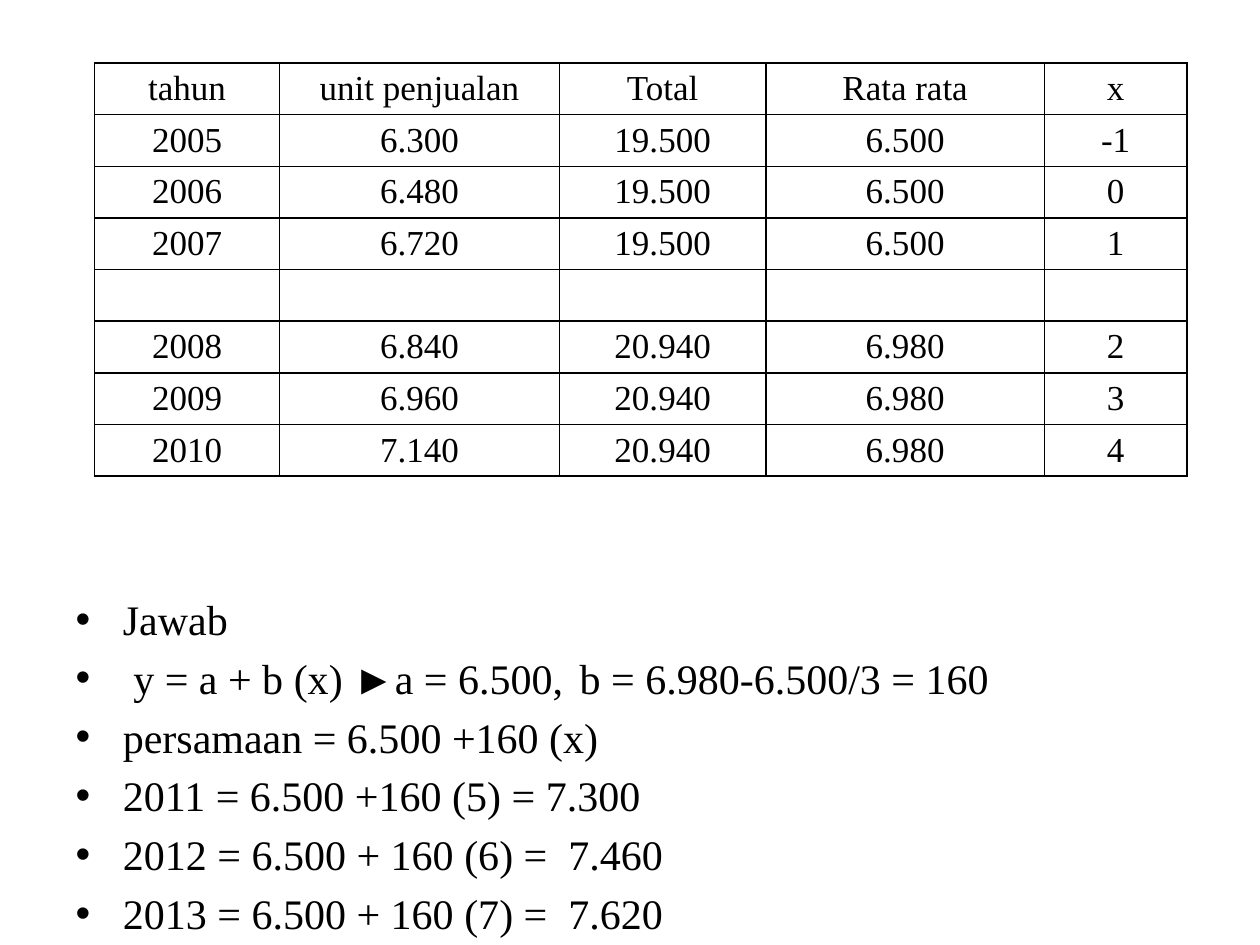
from lxml.etree import SubElement
from pptx import Presentation
from pptx.dml.color import RGBColor
from pptx.enum.text import MSO_ANCHOR, MSO_AUTO_SIZE, PP_ALIGN
from pptx.oxml.ns import qn
from pptx.util import Inches, Pt

BLACK = "000000"


def set_font(paragraph, size, color=BLACK):
    paragraph.font.name = "Times New Roman"
    paragraph.font.size = Pt(size)
    paragraph.font.bold = False
    paragraph.font.color.rgb = RGBColor.from_string(color)


def add_borders(cell, color=BLACK, width=1):
    properties = cell._tc.get_or_add_tcPr()
    for side in ("a:lnL", "a:lnR", "a:lnT", "a:lnB"):
        line = SubElement(properties, qn(side), w=str(Pt(width)))
        fill = SubElement(line, qn("a:solidFill"))
        SubElement(fill, qn("a:srgbClr"), val=color)


presentation = Presentation()
presentation.slide_width = Inches(10)
presentation.slide_height = Inches(7.5)

# The slide has a body but no title
slide = presentation.slides.add_slide(presentation.slide_layouts[1])
title = slide.shapes.title
title.element.getparent().remove(title.element)

# Worked answer, starting below the table; bullets come from the layout
answer = [
    "Jawab",
    " y = a + b (x) ►a = 6.500, \tb = 6.980-6.500/3 = 160",
    "persamaan = 6.500 +160 (x)",
    "2011 = 6.500 +160 (5) = 7.300",
    "2012 = 6.500 + 160 (6) =  7.460",
    "2013 = 6.500 + 160 (7) =  7.620",
]
body = slide.placeholders[1]
body.left, body.top = Inches(0.5), Inches(0.33)
body.width, body.height = Inches(9), Inches(7.17)
text_frame = body.text_frame
text_frame.auto_size = MSO_AUTO_SIZE.NONE
text_frame.vertical_anchor = MSO_ANCHOR.TOP
text_frame.margin_top = Inches(4.38)
text_frame.text = "\n".join(answer)
for paragraph in text_frame.paragraphs:
    set_font(paragraph, 24)
text_frame.paragraphs[0].space_before = Pt(0)

# Sales table
rows = [
    ("tahun", "unit penjualan", "Total", "Rata rata", "x"),
    ("2005", "6.300", "19.500", "6.500", "-1"),
    ("2006", "6.480", "19.500", "6.500", "0"),
    ("2007", "6.720", "19.500", "6.500", "1"),
    ("", "", "", "", ""),
    ("2008", "6.840", "20.940", "6.980", "2"),
    ("2009", "6.960", "20.940", "6.980", "3"),
    ("2010", "7.140", "20.940", "6.980", "4"),
]
column_widths = [1.47, 2.22, 1.64, 2.21, 1.13]
row_height = 0.41
table = slide.shapes.add_table(
    len(rows), len(column_widths), Inches(0.75), Inches(0.5),
    Inches(sum(column_widths)), Inches(row_height * len(rows)),
).table
table.first_row = False
table.horz_banding = False
for column, width in zip(table.columns, column_widths):
    column.width = Inches(width)

for row, values in zip(table.rows, rows):
    row.height = Inches(row_height)
    for cell, value in zip(row.cells, values):
        cell.text = value
        cell.margin_top = Inches(0.05)
        cell.margin_bottom = Inches(0.03)
        paragraph = cell.text_frame.paragraphs[0]
        paragraph.alignment = PP_ALIGN.CENTER
        set_font(paragraph, 20)
        add_borders(cell)
        cell.fill.background()

presentation.save("out.pptx")
